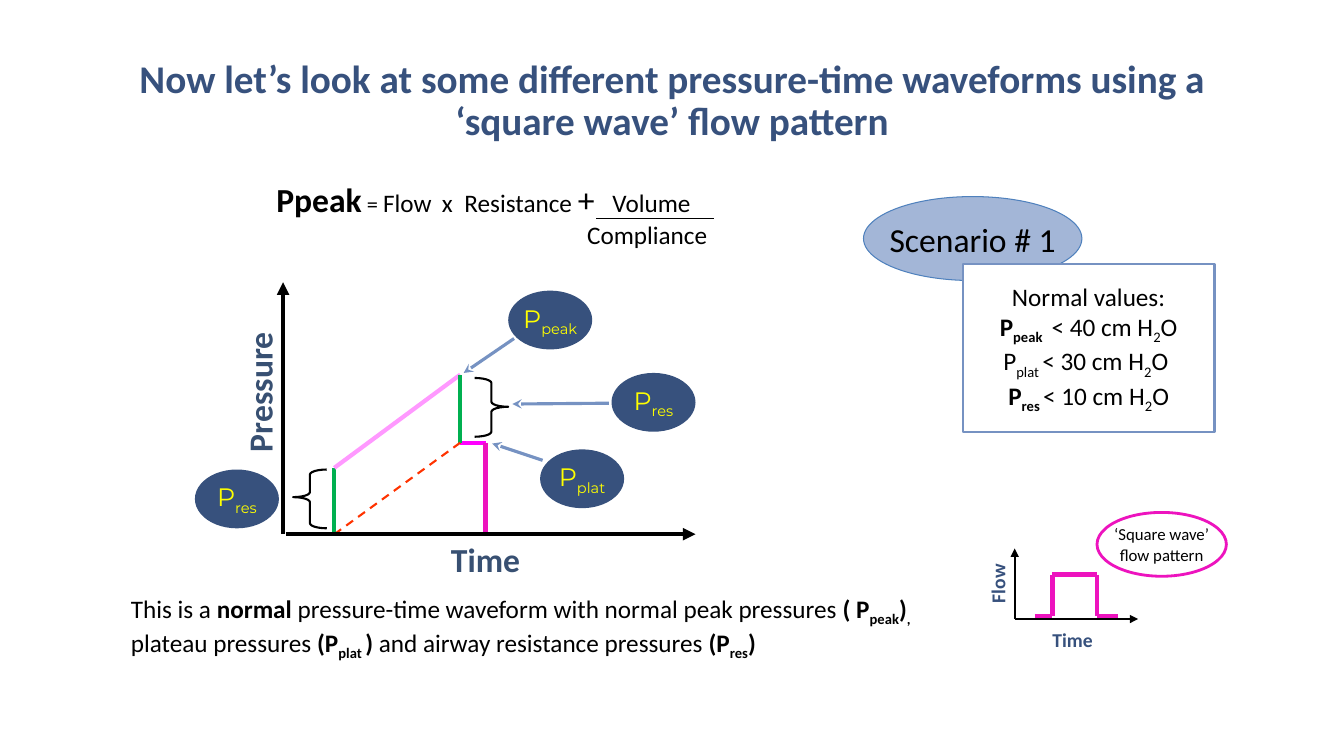
from dataclasses import dataclass
from itertools import pairwise
from typing import NamedTuple

import pptx
import pptx.dml.color
import pptx.enum.dml
import pptx.enum.shapes
import pptx.enum.text
import pptx.oxml
import pptx.oxml.ns
import pptx.util

COLS, ROWS = 160, 90
CELL = pptx.util.Inches(7.5) // ROWS

KIND = pptx.enum.shapes.MSO_SHAPE
ALIGN = pptx.enum.text.PP_ALIGN
ANCHOR = pptx.enum.text.MSO_ANCHOR


@dataclass(frozen=True)
class Theme:
    font: str = "Calibri"
    label: str = "Montserrat"
    black: str = "000000"
    white: str = "FFFFFF"
    navy: str = "37517D"
    slate: str = "385072"
    steel: str = "7692C2"
    sky: str = "A3B6D7"
    blue: str = "4F81BD"
    yellow: str = "FFFF00"
    pink: str = "ED13BE"
    rose: str = "FF99FF"
    fuchsia: str = "FF00FF"
    green: str = "00B050"
    red: str = "FF3300"
    title: int = 28
    large: int = 24
    body: int = 18
    medium: int = 16
    small: int = 14
    tiny: int = 12


THEME = Theme()


class Box(NamedTuple):
    """Left, top, width and height in grid cells."""
    left: float
    top: float
    wide: float
    high: float


class Spot(NamedTuple):
    col: float
    row: float


class Bit(NamedTuple):
    """A stretch of text with one look."""
    text: str
    bold: bool = False
    sub: bool = False
    size: int = 0


class Look(NamedTuple):
    size: int
    color: str = THEME.black
    font: str = THEME.font
    align: ALIGN = ALIGN.CENTER
    wrap: bool = False


class Line(NamedTuple):
    start: Spot
    end: Spot
    color: str
    width: float
    head: str = ""
    dash: bool = False


class Tag(NamedTuple):
    sub: str
    left: float
    top: float


class Brace(NamedTuple):
    left: float
    top: float
    tip: float
    flip: bool


Text = list[list[Bit]]


def cells(*counts: float) -> list[int]:
    return [round(count * CELL) for count in counts]


def shade(code: str) -> pptx.dml.color.RGBColor:
    return pptx.dml.color.RGBColor.from_string(code)


def write(shape, text: Text, look: Look, anchor=ANCHOR.MIDDLE, inset=(0, 0)) -> None:
    frame = shape.text_frame
    frame.word_wrap, frame.vertical_anchor = look.wrap, anchor
    frame.margin_left = frame.margin_right = pptx.util.Inches(inset[0])
    frame.margin_top = frame.margin_bottom = pptx.util.Inches(inset[1])
    for index, bits in enumerate(text):
        para = frame.add_paragraph() if index else frame.paragraphs[0]
        para.alignment = look.align
        for bit in bits:
            run = para.add_run()
            run.text = bit.text
            run.font.name, run.font.bold = look.font, bit.bold
            run.font.size = pptx.util.Pt(bit.size or look.size)
            run.font.color.rgb = shade(look.color)
            if bit.sub:
                run.font._element.set("baseline", "-25000")


def note(slide, box: Box, text: Text, look: Look, turn: int = 0, **place):
    shape = slide.shapes.add_textbox(*cells(*box))
    shape.rotation = turn
    write(shape, text, look, **place)
    return shape


def figure(slide, kind: KIND, box: Box, fill: str = "", edge: str = "", width: float = 0):
    shape = slide.shapes.add_shape(kind, *cells(*box))
    shape.shadow.inherit = False
    if fill:
        shape.fill.solid()
        shape.fill.fore_color.rgb = shade(fill)
    else:
        shape.fill.background()
    if edge:
        shape.line.color.rgb = shade(edge)
        shape.line.width = pptx.util.Pt(width)
    else:
        shape.line.fill.background()
    return shape


def draw(slide, line: Line) -> None:
    link = slide.shapes.add_connector(
        pptx.enum.shapes.MSO_CONNECTOR.STRAIGHT, *cells(*line.start, *line.end))
    link.line.color.rgb = shade(line.color)
    link.line.width = pptx.util.Pt(line.width)
    if line.dash:
        link.line.dash_style = pptx.enum.dml.MSO_LINE.DASH
    props = link._element.spPr
    if line.head:
        tail = pptx.oxml.parse_xml(
            f'<a:tailEnd {pptx.oxml.ns.nsdecls("a")} type="{line.head}"/>')
        link.line._get_or_add_ln().append(tail)
    props.append(pptx.oxml.parse_xml(f'<a:effectLst {pptx.oxml.ns.nsdecls("a")}/>'))


def equation(slide) -> None:
    text = [[Bit("Ppeak", True, size=THEME.large), Bit(" = ", size=THEME.medium),
             Bit("Flow\tx\tResistance "), Bit("+", size=THEME.large), Bit("\tVolume")],
            [Bit("Compliance")]]
    shape = note(slide, Box(32.9, 20, 59, 11), text, Look(THEME.body, align=ALIGN.LEFT))
    top, below = shape.text_frame.paragraphs
    stops = "".join(f'<a:tab pos="{pos}" algn="l"/>' for pos in cells(19.7, 22.4, 40))
    top._p.get_or_add_pPr().append(pptx.oxml.parse_xml(
        f'<a:tabLst {pptx.oxml.ns.nsdecls("a")}>{stops}</a:tabLst>'))
    below._p.get_or_add_pPr().set("marL", str(cells(37)[0]))
    draw(slide, Line(Spot(71, 26), Spot(85, 26), THEME.black, 1.25))


def scene(slide) -> None:
    oval = figure(slide, KIND.OVAL, Box(102.8, 23.4, 26, 10), THEME.sky, THEME.blue, 0.75)
    write(oval, [[Bit("Scenario # 1")]], Look(THEME.large))
    card = figure(slide, KIND.RECTANGLE, Box(114.6, 31.4, 30, 20),
                  THEME.white, THEME.steel, 1.5)
    rows = [("peak ", " < 40 cm H", "O", True), ("plat ", "< 30 cm H", "O ", False),
            ("res ", "< 10 cm H", "O", True)]
    limits = [[Bit("P", bold), Bit(sub, bold, True), Bit(limit), Bit("2", sub=True), Bit(end)]
              for sub, limit, end, bold in rows]
    write(card, [[Bit("Normal values:")], *limits], Look(THEME.body))


def flow(slide) -> None:
    zero, low, high = Spot(120.8, 73.7), 73.3, 68.4
    for end in (Spot(135.5, zero.row), Spot(zero.col, 65.3)):
        draw(slide, Line(zero, end, THEME.black, 1.5, "triangle"))
    wave = [Spot(123.2, low), Spot(125.3, low), Spot(125.3, high),
            Spot(130.6, high), Spot(130.6, low), Spot(133.1, low)]
    for start, end in pairwise(wave):
        draw(slide, Line(start, end, THEME.pink, 3))
    look = Look(THEME.small, THEME.navy)
    note(slide, Box(125, 75, 5.4, 2.4), [[Bit("Time", True)]], look)
    note(slide, Box(115.7, 68.4, 6.1, 2.2), [[Bit("Flow", True)]], look, 270)
    oval = figure(slide, KIND.OVAL, Box(130.6, 61, 15.4, 7.6), edge=THEME.pink, width=2)
    write(oval, [[Bit("‘Square wave’")], [Bit("flow pattern")]], Look(THEME.tiny))


def pressure(slide) -> None:
    base = 63.6
    foot, step = Spot(39.8, base), Spot(39.8, 55.7)
    peak, plat, drop = Spot(54.8, 44.6), Spot(54.8, 52.7), Spot(57.8, 52.7)
    lines = [
        Line(foot, step, THEME.green, 3),
        Line(step, peak, THEME.rose, 3),
        Line(plat, drop, THEME.fuchsia, 3),
        Line(drop, Spot(drop.col, base), THEME.pink, 3),
        Line(plat, peak, THEME.green, 3),
        Line(foot, plat, THEME.red, 1.5, dash=True),
        Line(Spot(61.2, 40.3), Spot(55.2, 44.4), THEME.steel, 2.25, "stealth"),
        Line(Spot(64.6, 54.8), Spot(58.6, 52.8), THEME.steel, 2.25, "stealth"),
        Line(Spot(72.5, 48), Spot(61, 48.1), THEME.steel, 2.25, "stealth"),
        Line(Spot(34, base), Spot(82.8, base), THEME.black, 3, "triangle"),
        Line(Spot(33.7, base), Spot(33.7, 33.6), THEME.black, 3, "triangle"),
    ]
    for line in lines:
        draw(slide, line)
    for tag in (Tag("peak", 60.5, 34.6), Tag("res", 23.2, 55.9),
                Tag("plat", 64.3, 53.5), Tag("res", 72.8, 44.4)):
        oval = figure(slide, KIND.OVAL, Box(tag.left, tag.top, 10, 7), THEME.navy)
        write(oval, [[Bit("P"), Bit(tag.sub, sub=True)]],
              Look(THEME.body, THEME.yellow, THEME.label))
    for brace in (Brace(34.9, 55.9, 0.47, True), Brace(56.5, 45, 0.49, False)):
        shape = figure(slide, KIND.RIGHT_BRACE, Box(brace.left, brace.top, 4, 7),
                       edge=THEME.black, width=1.5)
        shape.adjustments[0], shape.adjustments[1] = 0.15, brace.tip
        if brace.flip:
            shape._element.spPr.xfrm.set("flipH", "1")
    look = Look(THEME.large, THEME.slate)
    note(slide, Box(23, 44.3, 15.7, 4.8), [[Bit("Pressure", True)]], look, 270)
    note(slide, Box(50.3, 64.4, 15, 4.3), [[Bit("Time", True)]], look)


def summary(slide) -> None:
    text = [[Bit("This is a "), Bit("normal ", True),
             Bit("pressure-time waveform with normal peak pressures "),
             Bit("( P", True), Bit("peak", True, True), Bit(")", True), Bit(", ", True, True),
             Bit("plateau pressures "), Bit("(P", True), Bit("plat ", True, True),
             Bit(") ", True), Bit("and airway resistance pressures "),
             Bit("(P", True), Bit("res", True, True), Bit(")", True)]]
    note(slide, Box(14.4, 70, 98.9, 8.5), text,
         Look(THEME.body, align=ALIGN.LEFT, wrap=True), anchor=ANCHOR.TOP, inset=(0.1, 0.05))


def head(slide) -> None:
    title = slide.shapes.title
    title.left, title.top, title.width, title.height = cells(11, 2, 138, 15.8)
    text = "Now let’s look at some different pressure-time waveforms using a ‘square wave’ flow pattern"
    write(title, [[Bit(text, True)]], Look(THEME.title, THEME.navy, wrap=True),
          ANCHOR.BOTTOM, (0.1, 0.05))
    title.text_frame.auto_size = pptx.enum.text.MSO_AUTO_SIZE.NONE
    title.text_frame.paragraphs[0].line_spacing = 0.9


def main() -> None:
    deck = pptx.Presentation()
    deck.slide_width, deck.slide_height = cells(COLS, ROWS)
    slide = deck.slides.add_slide(deck.slide_layouts[5])
    for part in (head, equation, scene, flow, pressure, summary):
        part(slide)
    deck.save("out.pptx")


if __name__ == "__main__":
    main()
